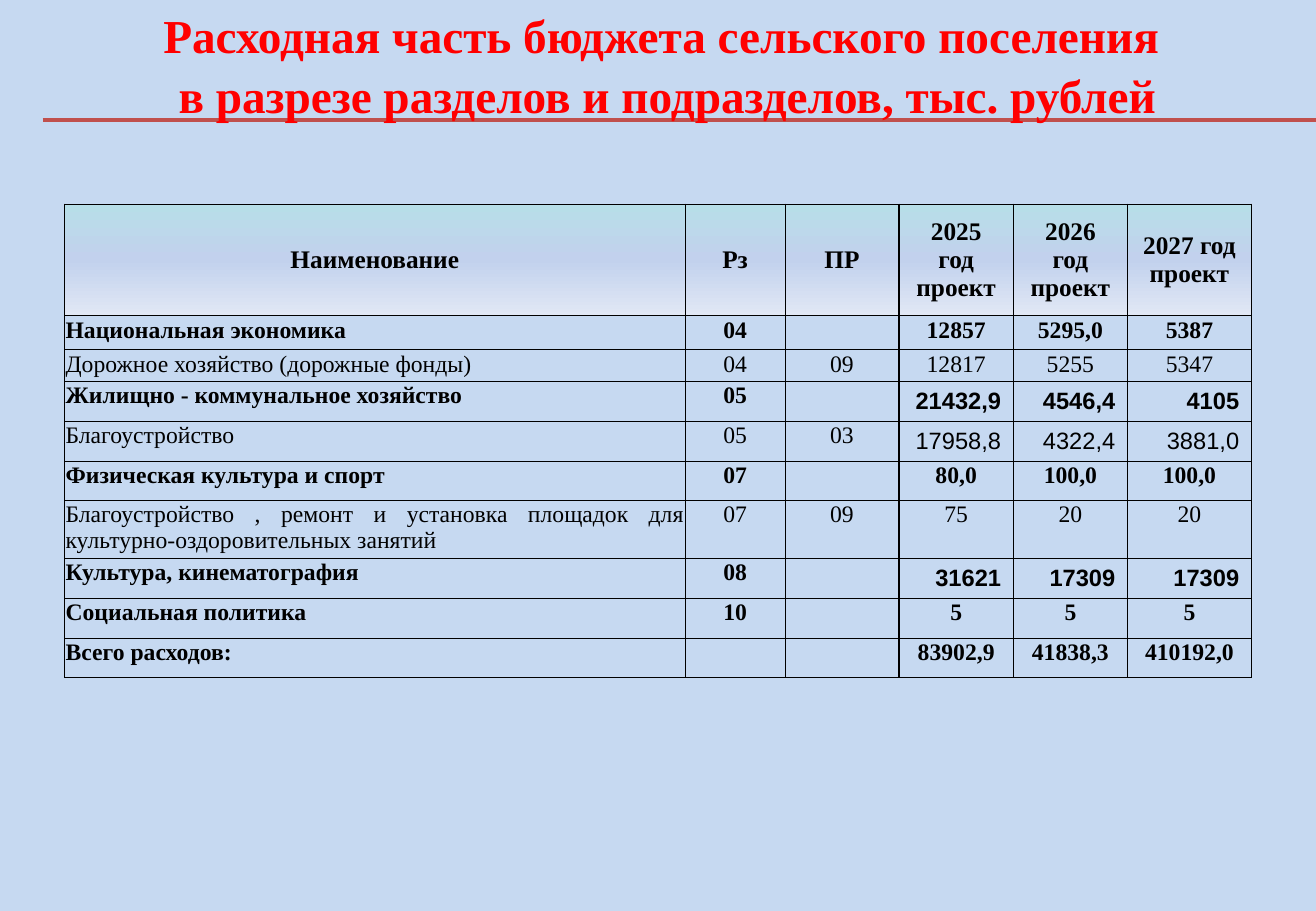
"""Builds a slide with the expenditure table of a rural settlement budget."""
from lxml.etree import SubElement
from pptx import Presentation
from pptx.dml.color import RGBColor
from pptx.enum.shapes import MSO_CONNECTOR
from pptx.enum.text import MSO_ANCHOR, MSO_AUTO_SIZE, PP_ALIGN
from pptx.oxml.ns import qn
from pptx.util import Inches, Pt

TITLE = "Расходная часть бюджета сельского поселения \vв разрезе разделов и подразделов, тыс. рублей"
HEADER = ["Наименование", "Рз", "ПР", "2025 год\nпроект", "2026 год проект", "2027 год\nпроект"]
SERIF, SANS = "Times New Roman", "Arial"
ROWS = [
    (0.28, True, SERIF, ["Национальная экономика", "04", "", "12857", "5295,0", "5387"]),
    (0.26, False, SERIF, ["Дорожное хозяйство (дорожные фонды) ", "04", "09", "12817", "5255", "5347"]),
    (0.33, True, SANS, ["Жилищно - коммунальное хозяйство", "05", "", "21432,9", "4546,4", "4105"]),
    (0.33, False, SANS, ["Благоустройство", "05", "03", "17958,8", "4322,4", "3881,0"]),
    (0.32, True, SERIF, ["Физическая культура и спорт", "07", "", "80,0", "100,0", "100,0"]),
    (0.48, False, SERIF, ["Благоустройство , ремонт и установка площадок для культурно-оздоровительных занятий",
                          "07", "09", "75", "20", "20"]),
    (0.33, True, SANS, ["Культура, кинематография ", "08", "", "31621", "17309", "17309"]),
    (0.33, True, SERIF, ["Социальная политика", "10", "", "5", "5", "5"]),
    (0.32, True, SERIF, ["Всего расходов:", "", "", "83902,9", "41838,3", "410192,0"]),
]
HEADER_HEIGHT = 0.92
COLUMN_WIDTHS = [5.11, 0.82, 0.94, 0.94, 0.94, 1.02]
FIRST_YEAR_COLUMN = 3
COLORS = {"background": "C6D9F1", "title": "FF0000", "rule": "C0504D", "ink": "000000"}
HEADER_GRADIENT = [(0, "B7DEE8"), (50, "C2D1ED"), (100, "E1E8F5")]


def color(name):
    return RGBColor.from_string(COLORS[name])


def format_text(frame, align, font, size, bold, ink):
    for para in frame.paragraphs:
        para.alignment = align
        for span in para.runs:
            span.font.name = font
            span.font.size = Pt(size)
            span.font.bold = bold
            span.font.color.rgb = color(ink)
        if not para.runs:
            SubElement(para._p, qn("a:endParaRPr"), sz=str(size * 100))


def add_solid(parent, value):
    SubElement(SubElement(parent, qn("a:solidFill")), qn("a:srgbClr"), val=value)


def set_borders(cell, row, column):
    widths = {
        "L": 1 if column % 2 else 0.5,
        "R": 0.5 if column % 2 else 1,
        "T": 1 if row == 1 else 0.5,
        "B": 1 if row == 0 else 0.5,
    }
    properties = cell._tc.get_or_add_tcPr()
    for side, width in widths.items():
        add_solid(SubElement(properties, qn(f"a:ln{side}"), w=str(Pt(width))), COLORS["ink"])


def set_gradient(cell):
    gradient = SubElement(cell._tc.get_or_add_tcPr(), qn("a:gradFill"))
    stops = SubElement(gradient, qn("a:gsLst"))
    for percent, value in HEADER_GRADIENT:
        stop = SubElement(stops, qn("a:gs"), pos=str(percent * 1000))
        SubElement(stop, qn("a:srgbClr"), val=value)
    SubElement(gradient, qn("a:lin"), ang="5400000", scaled="0")


def set_margins(cell, left, top, right, bottom):
    cell.margin_left, cell.margin_top = Inches(left), Inches(top)
    cell.margin_right, cell.margin_bottom = Inches(right), Inches(bottom)


def fill_cell(cell, text, row, column, bold, font):
    cell.text_frame.text = text
    align, size = PP_ALIGN.CENTER, 14
    set_borders(cell, row, column)
    if row == 0:
        size = 15
        set_margins(cell, 0.09, 0.08, 0.09, 0.08)
        cell.vertical_anchor = MSO_ANCHOR.MIDDLE
        set_gradient(cell)
    else:
        cell.fill.background()
        if font == SANS and column >= FIRST_YEAR_COLUMN:
            align = PP_ALIGN.RIGHT
            set_margins(cell, 0.1, 0.05, 0.1, 0.05)
            cell.vertical_anchor = MSO_ANCHOR.MIDDLE
        else:
            font = SERIF
            set_margins(cell, 0.01, 0.01, 0.01, 0)
            if column == 0:
                align = PP_ALIGN.JUSTIFY
    format_text(cell.text_frame, align, font, size, bold, "ink")


def add_title(page):
    title = page.shapes.title
    title.left, title.top, title.width, title.height = map(Inches, (0.46, 0, 10.06, 1.04))
    frame = title.text_frame
    frame.text = TITLE
    frame.word_wrap = True
    frame.auto_size = MSO_AUTO_SIZE.NONE
    frame.paragraphs[0].line_spacing = 1.05
    format_text(frame, PP_ALIGN.CENTER, SERIF, 28, True, "title")


def add_rule(page):
    rule = page.shapes.add_connector(
        MSO_CONNECTOR.STRAIGHT, Inches(0.35), Inches(0.99), Inches(10.83), Inches(0.99))
    rule.line.color.rgb = color("rule")
    rule.line.width = Pt(2.5)
    SubElement(rule._element.spPr, qn("a:effectLst"))
    page.shapes._spTree.insert(2, rule._element)


def add_budget_table(page):
    lines = [(HEADER_HEIGHT, True, SERIF, HEADER)] + ROWS
    height = sum(line[0] for line in lines)
    table = page.shapes.add_table(
        len(lines), len(HEADER), Inches(0.53), Inches(1.68),
        Inches(sum(COLUMN_WIDTHS)), Inches(height)).table
    table.first_row = table.horz_banding = False
    for column, width in enumerate(COLUMN_WIDTHS):
        table.columns[column].width = Inches(width)
    for row, (row_height, bold, font, texts) in enumerate(lines):
        table.rows[row].height = Inches(row_height)
        for column, text in enumerate(texts):
            fill_cell(table.cell(row, column), text, row, column, bold, font)


def main():
    deck = Presentation()
    deck.slide_width, deck.slide_height = Inches(10.83), Inches(7.5)
    page = deck.slides.add_slide(deck.slide_layouts[5])
    page.background.fill.solid()
    page.background.fill.fore_color.rgb = color("background")
    add_title(page)
    add_rule(page)
    add_budget_table(page)
    deck.save("out.pptx")


if __name__ == "__main__":
    main()
